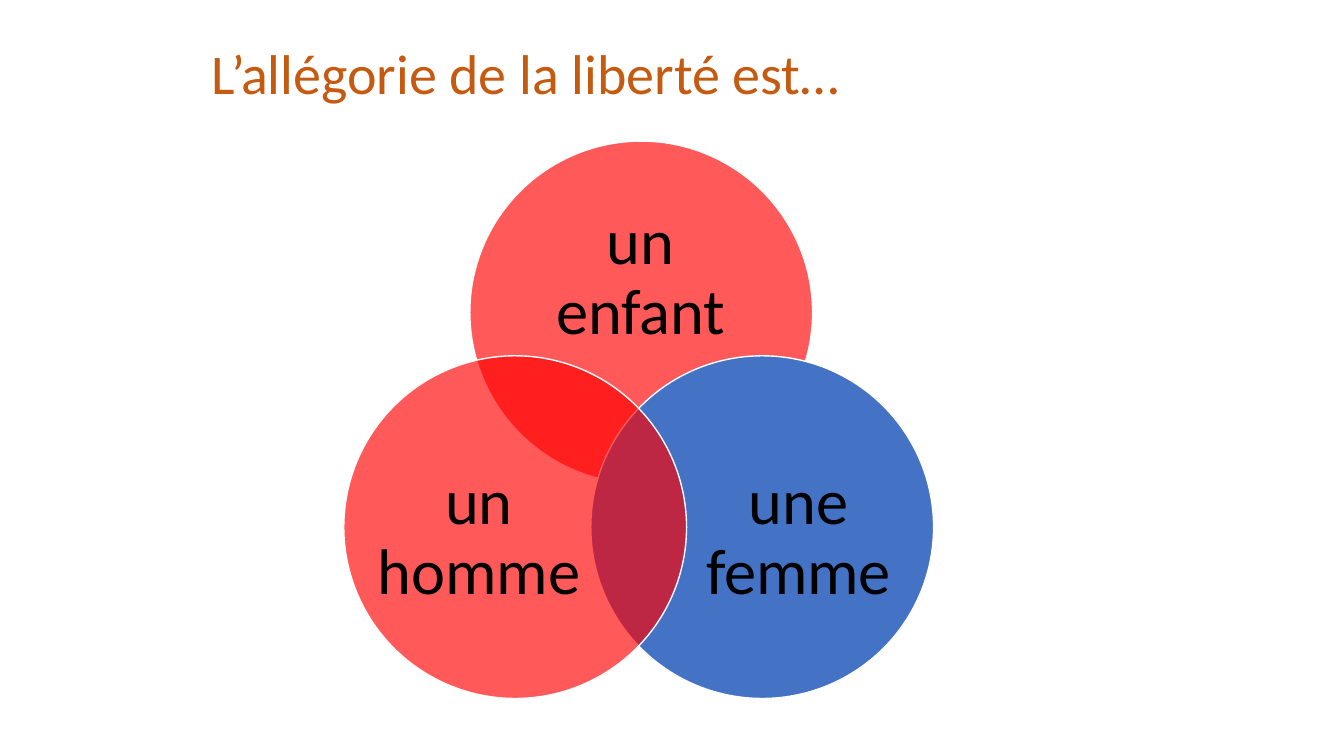
from lxml.etree import SubElement
from pptx import Presentation
from pptx.dml.color import RGBColor
from pptx.enum.shapes import MSO_SHAPE
from pptx.enum.text import MSO_ANCHOR, PP_ALIGN
from pptx.oxml.ns import qn
from pptx.util import Inches, Pt

RED = RGBColor(0xFF, 0x00, 0x00)
BLUE = RGBColor(0x44, 0x72, 0xC4)
WHITE = RGBColor(0xFF, 0xFF, 0xFF)
BLACK = RGBColor(0x00, 0x00, 0x00)
ORANGE = RGBColor(0xC5, 0x5A, 0x11)
FONT = "Calibri"
DIAMETER = 3.4

# Circle left and top, colour, opacity in percent, label, label box
ANSWERS = [
    (4.66, 1.4, RED, 65, "un enfant", (5.15, 2, 2.41, 1.53)),
    (5.86, 3.53, BLUE, 100, "une femme", (6.9, 4.41, 2.04, 1.87)),
    (3.41, 3.53, RED, 65, "un homme", (3.73, 4.41, 2.04, 1.87)),
]


def add_run(paragraph, text, size, color):
    run = paragraph.add_run()
    run.text = text
    run.font.name = FONT
    run.font.size = Pt(size)
    run.font.color.rgb = color


def add_title(slide, text):
    title = slide.shapes.title
    title.left, title.top = Inches(2), Inches(0.33)
    title.width, title.height = Inches(9.33), Inches(0.77)
    title.text_frame.vertical_anchor = MSO_ANCHOR.TOP
    paragraph = title.text_frame.paragraphs[0]
    paragraph.alignment = PP_ALIGN.LEFT
    add_run(paragraph, text, 40, ORANGE)


def add_circle(slide, left, top, color, opacity):
    circle = slide.shapes.add_shape(
        MSO_SHAPE.OVAL, Inches(left), Inches(top), Inches(DIAMETER), Inches(DIAMETER)
    )
    circle.shadow.inherit = False
    circle.fill.solid()
    circle.fill.fore_color.rgb = color
    if opacity < 100:
        color_element = circle.element.spPr.find(qn("a:solidFill"))[0]
        SubElement(color_element, qn("a:alpha"), val=str(opacity * 1000))
    circle.line.color.rgb = WHITE
    circle.line.width = Pt(1)


def add_label(slide, text, box):
    label = slide.shapes.add_textbox(*(Inches(length) for length in box))
    frame = label.text_frame
    frame.word_wrap = True
    frame.vertical_anchor = MSO_ANCHOR.MIDDLE
    frame.margin_left = frame.margin_right = Inches(0)
    frame.margin_top = frame.margin_bottom = Inches(0)
    paragraph = frame.paragraphs[0]
    paragraph.alignment = PP_ALIGN.CENTER
    paragraph.line_spacing = 0.9
    add_run(paragraph, text, 46, BLACK)


def main():
    presentation = Presentation()
    presentation.slide_width = Inches(13.33)
    presentation.slide_height = Inches(7.5)
    slide = presentation.slides.add_slide(presentation.slide_layouts.get_by_name("Title Only"))
    add_title(slide, "L’allégorie de la liberté est…")
    for left, top, color, opacity, text, box in ANSWERS:
        add_circle(slide, left, top, color, opacity)
        add_label(slide, text, box)
    presentation.save("out.pptx")


if __name__ == "__main__":
    main()
